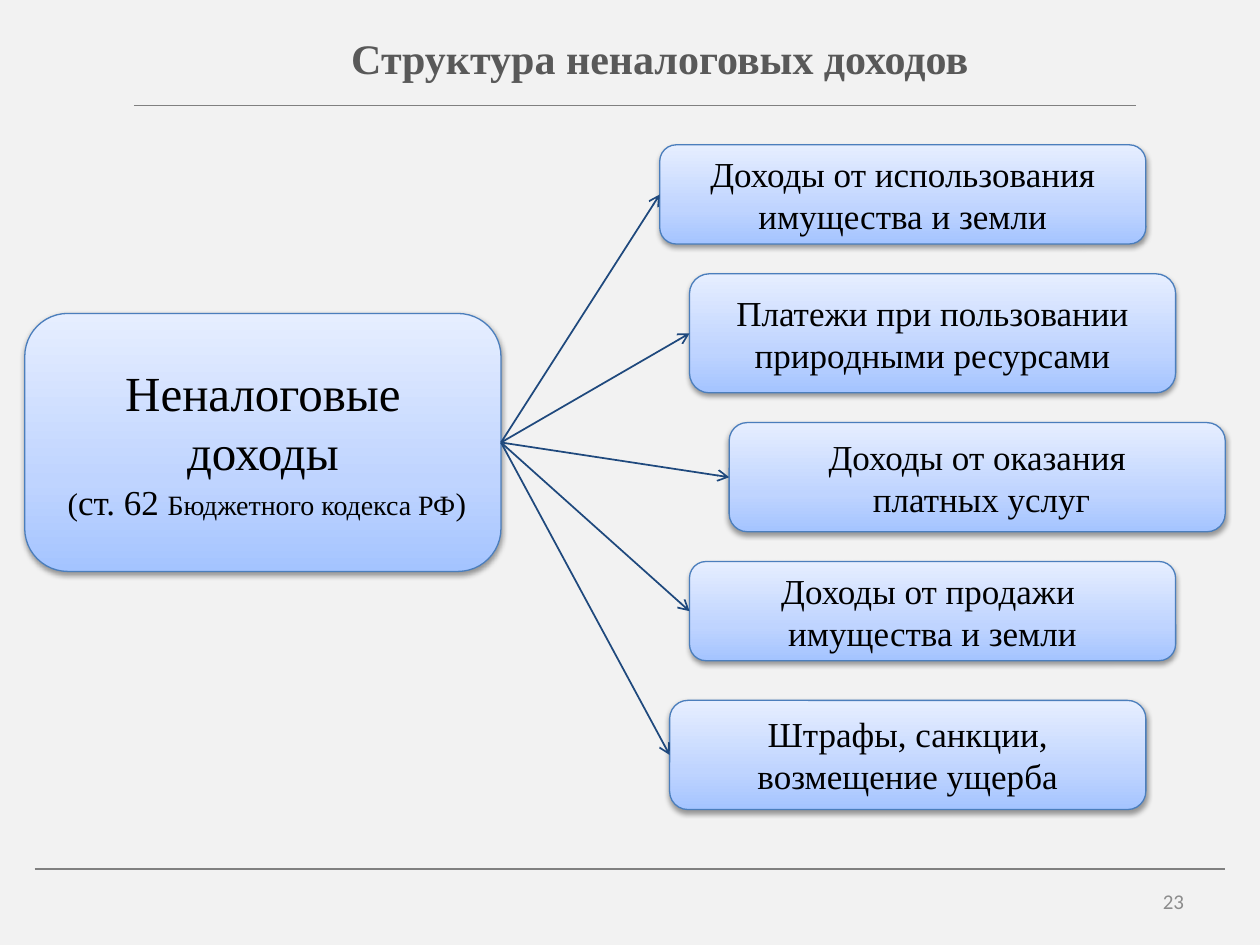
"""Builds the slide on the structure of non-tax revenues."""
from lxml.etree import SubElement
from pptx import Presentation
from pptx.dml.color import RGBColor
from pptx.enum.shapes import MSO_CONNECTOR, MSO_SHAPE
from pptx.enum.text import MSO_ANCHOR, MSO_AUTO_SIZE, PP_ALIGN
from pptx.oxml.ns import qn
from pptx.util import Inches, Mm, Pt

COLORS = {
    "background": "F2F2F2", "title": "595959", "text": "000000", "number": "8C8C8C",
    "rule": "808080", "border": "4B7EBC", "arrow": "1F497D", "shadow": "000000",
}
GRADIENT = {0: "A4C4FF", 35000: "BFD4FF", 100000: "E6EEFF"}
SERIF = "Times New Roman"
CELL = Mm(2)
LEFT_SITE, RIGHT_SITE = 1, 3


def color(name):
    """Return the named colour."""
    return RGBColor.from_string(COLORS[name])


def cells(*counts):
    """Turn numbers of grid cells into lengths."""
    return [round(count * CELL) for count in counts]


def set_values(target, values):
    """Set attributes of an object from a dict."""
    for name, value in values.items():
        setattr(target, name, value)


class SlideBuilder:
    """Holds the style and the current slide."""

    def __init__(self, presentation):
        """Add a title-only slide with a plain background."""
        self.slide = presentation.slides.add_slide(presentation.slide_layouts[5])
        self.slide.background.fill.solid()
        self.slide.background.fill.fore_color.rgb = color("background")

    def fill_text(self, shape, paragraphs, alignment, anchor, ink="text", **font):
        """Fill a shape with paragraphs made of (text, size) runs."""
        frame = shape.text_frame
        set_values(frame, {"word_wrap": True, "auto_size": MSO_AUTO_SIZE.NONE,
                           "vertical_anchor": anchor})
        for index, runs in enumerate(paragraphs):
            paragraph = frame.add_paragraph() if index else frame.paragraphs[0]
            paragraph.alignment = alignment
            for text, size in runs:
                run = paragraph.add_run()
                run.text = text
                set_values(run.font, {"name": SERIF, "size": Pt(size), **font})
                run.font.color.rgb = color(ink)

    def title(self, text, left, top, width, height):
        """Place and format the title placeholder."""
        shape = self.slide.shapes.title
        set_values(shape, dict(zip(("left", "top", "width", "height"),
                                   cells(left, top, width, height))))
        self.fill_text(shape, [[(text, 24)]], PP_ALIGN.CENTER, MSO_ANCHOR.TOP, "title",
                       bold=True)

    def number(self, text, left, top, width, height):
        """Add the page number."""
        shape = self.slide.shapes.add_textbox(*cells(left, top, width, height))
        self.fill_text(shape, [[(text, 12)]], PP_ALIGN.RIGHT, MSO_ANCHOR.MIDDLE, "number",
                       name="Calibri")

    def box(self, paragraphs, left, top, width, height):
        """Add a rounded box with a gradient and a soft shadow."""
        shape = self.slide.shapes.add_shape(
            MSO_SHAPE.FLOWCHART_ALTERNATE_PROCESS, *cells(left, top, width, height))
        shape.fill.gradient()
        shape.fill.gradient_angle = 90
        stops = shape._element.spPr.find(".//" + qn("a:gsLst"))
        stops.clear()
        for position, value in GRADIENT.items():
            stop = SubElement(stops, qn("a:gs"), pos=str(position))
            SubElement(stop, qn("a:srgbClr"), val=value)
        shape.line.color.rgb = color("border")
        shape.line.width = Pt(0.75)
        shape.shadow.inherit = False
        effects = shape._element.spPr.find(qn("a:effectLst"))
        shadow = SubElement(effects, qn("a:outerShdw"), blurRad="40000", dist="20000",
                            dir="5400000", rotWithShape="0")
        tint = SubElement(shadow, qn("a:srgbClr"), val=COLORS["shadow"])
        SubElement(tint, qn("a:alpha"), val="38000")
        self.fill_text(shape, paragraphs, PP_ALIGN.CENTER, MSO_ANCHOR.MIDDLE)
        return shape

    def line(self, left=0, right=0, row=0, ink="rule", width=0.75):
        """Add a horizontal line without a shadow."""
        start, end, height = cells(left, right, row)
        connector = self.slide.shapes.add_connector(
            MSO_CONNECTOR.STRAIGHT, start, height, end, height)
        connector.line.color.rgb = color(ink)
        connector.line.width = Pt(width)
        SubElement(connector._element.spPr, qn("a:effectLst"))
        return connector

    def arrow(self, source, target):
        """Join the right side of one box to the left side of another."""
        connector = self.line(ink="arrow", width=1)
        connector.begin_connect(source, RIGHT_SITE)
        connector.end_connect(target, LEFT_SITE)
        outline = connector._element.spPr.find(qn("a:ln"))
        SubElement(outline, qn("a:tailEnd"), type="arrow")


def main():
    """Build and save the presentation."""
    presentation = Presentation()
    set_values(presentation, {"slide_width": Inches(10), "slide_height": Inches(7.5)})
    builder = SlideBuilder(presentation)
    builder.title("Структура неналоговых доходов", 12.5, 2.6, 108, 8)
    builder.line(13.5, 114.5, 10.6)
    builder.line(3.5, 123.5, 87.6)
    builder.number("23", 91, 88.25, 29.6, 5.1)

    revenues = builder.box([
        [("Неналоговые доходы", 28)],
        [(" (", 18), ("ст. 62 ", 20), ("Бюджетного кодекса РФ", 16), (")", 18)],
    ], 2.5, 31.6, 48, 26)
    sources = [
        (["Доходы от использования", "имущества и земли"], 66.5, 49, 10, 3),
        (["Платежи при пользовании природными ресурсами"], 69.5, 49, 12, 3),
        (["Доходы от оказания", " платных услуг"], 73.5, 50, 11, 3),
        (["Доходы от продажи ", "имущества и земли"], 69.5, 49, 10, 4),
        (["Штрафы, санкции, возмещение ущерба"], 67.5, 48, 11, 0),
    ]
    top = 14.6
    for texts, left, width, height, gap in sources:
        source = builder.box([[(text, 20)] for text in texts], left, top, width, height)
        builder.arrow(revenues, source)
        top += height + gap
    presentation.save("out.pptx")


if __name__ == "__main__":
    main()
